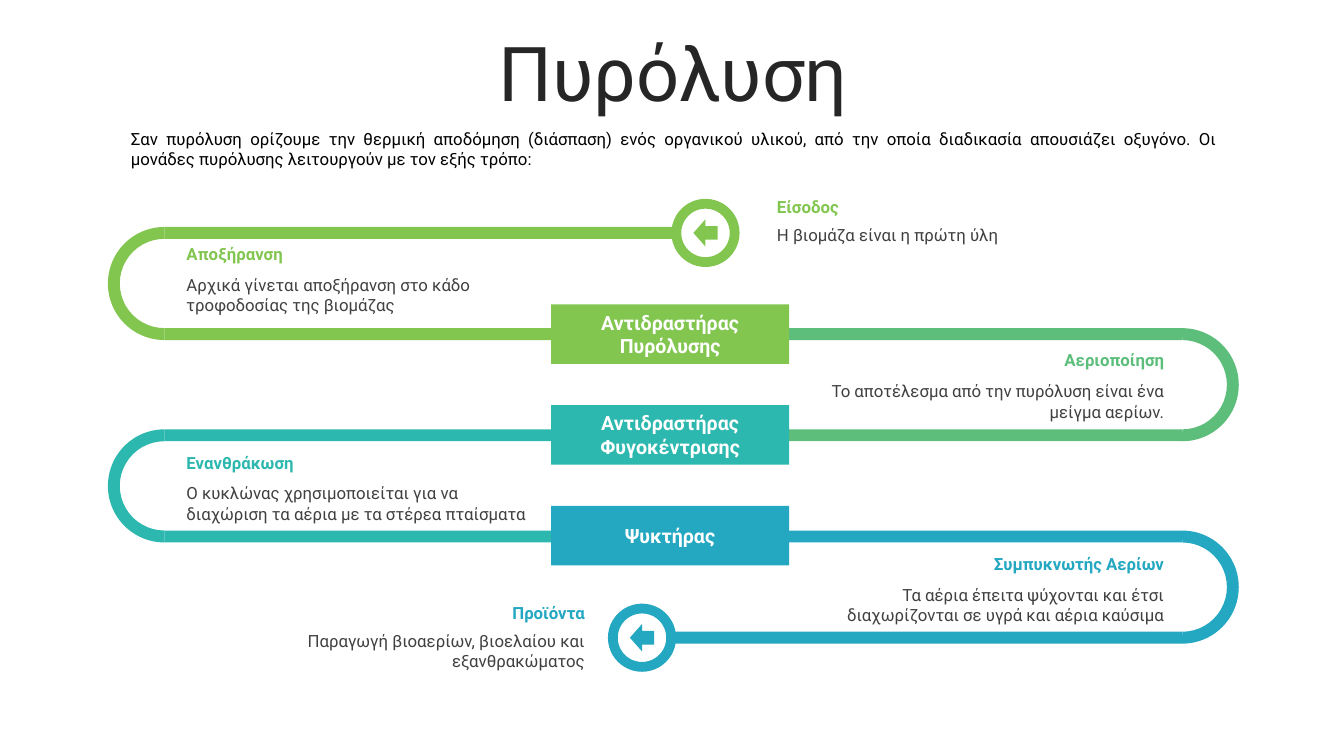
from pptx import Presentation
from pptx.dml.color import RGBColor
from pptx.enum import shapes, text
from pptx.util import Cm, Pt

LIME, GREEN, TEAL, BLUE = "82C650", "5CBE7A", "2CB8AE", "24A8C2"
WHITE, BLACK, GREY, DARK = "FFFFFF", "000000", "404040", "262626"
FONT = "Roboto"
LEFT, RIGHT = text.PP_ALIGN.LEFT, text.PP_ALIGN.RIGHT
CENTER, JUSTIFY = text.PP_ALIGN.CENTER, text.PP_ALIGN.JUSTIFY
PRESET = shapes.MSO_SHAPE

FIRST_ROW, ROW_PITCH, BAND = 5.72, 2.55, 0.3
ARC = ROW_PITCH + BAND
LEFT_ARC, RIGHT_ARC = 2.72, 28.37
QUARTER_DOWN, QUARTER_UP = 54, 162  # 90 and 270 degrees

# side, upper row, colour, inner ends of the upper and lower bands
LOOPS = [
    ("left", 0, LIME, 16.97, 14.15),
    ("left", 2, TEAL, 14.15, 14.15),
    ("right", 1, GREEN, 19.84, 19.84),
    ("right", 3, BLUE, 19.84, 16.87),
]
STAGES = [
    ("Αντιδραστήρας Πυρόλυσης", LIME),
    ("Αντιδραστήρας Φυγοκέντρισης", TEAL),
    ("Ψυκτήρας", BLUE),
]
# left, top, width, distance to body, alignment, colour, heading, body
CAPTIONS = [
    (4.45, 6.02, 9.02, 0.78, LEFT, LIME, "Αποξήρανση",
     "Αρχικά γίνεται αποξήρανση στο κάδο τροφοδοσίας της βιομάζας"),
    (4.45, 11.28, 9.12, 0.77, LEFT, TEAL, "Ενανθράκωση",
     "O κυκλώνας χρησιμοποιείται για να διαχώριση τα αέρια με τα στέρεα πταίσματα"),
    (20.47, 8.7, 9.12, 0.78, RIGHT, GREEN, "Αεριοποίηση",
     "Το αποτέλεσμα από την πυρόλυση είναι ένα μείγμα αερίων."),
    (20.37, 13.83, 9.22, 0.78, RIGHT, BLUE, "Συμπυκνωτής Αερίων",
     "Τα αέρια έπειτα ψύχονται και έτσι διαχωρίζονται σε υγρά και αέρια καύσιμα"),
    (6.81, 15.06, 8.18, 0.71, RIGHT, BLUE, "Προϊόντα",
     "Παραγωγή βιοαερίων, βιοελαίου και εξανθρακώματος"),
    (19.33, 4.83, 8.2, 0.71, LEFT, LIME, "Είσοδος",
     "Η βιομάζα είναι η πρώτη ύλη"),
]
INTRO = ("Σαν πυρόλυση ορίζουμε την θερμική αποδόμηση (διάσπαση) ενός οργανικού "
         "υλικού, από την οποία διαδικασία απουσιάζει οξυγόνο. Οι μονάδες πυρόλυσης "
         "λειτουργούν με τον εξής τρόπο:")


def rgb(value):
    return RGBColor.from_string(value)


def write(frame, words, size, color, align, bold=False):
    """Fill a text frame with one uniformly formatted paragraph."""
    frame.word_wrap = True
    para = frame.paragraphs[0]
    para.text = words
    para.alignment = align
    font = para.font
    font.name, font.size, font.bold = FONT, Pt(size), bold
    font.color.rgb = rgb(color)
    return para


def add_title(page, words):
    title = page.shapes.title
    title.left, title.top, title.width, title.height = Cm(0.89), Cm(0.94), Cm(32.16), Cm(2)
    frame = title.text_frame
    frame.auto_size = text.MSO_AUTO_SIZE.NONE
    frame.vertical_anchor = text.MSO_ANCHOR.MIDDLE
    para = write(frame, words, 54, DARK, CENTER)
    para.line_spacing = 0.9
    para.space_before = Pt(10)


def add_text(page, left, top, width, height, words, color, align, bold=False):
    box = page.shapes.add_textbox(Cm(left), Cm(top), Cm(width), Cm(height))
    write(box.text_frame, words, 12, color, align, bold)


def add_solid(page, preset, left, top, width, height, color):
    shape = page.shapes.add_shape(preset, Cm(left), Cm(top), Cm(width), Cm(height))
    shape.shadow.inherit = False
    shape.fill.solid()
    shape.fill.fore_color.rgb = rgb(color)
    shape.line.fill.background()
    return shape


def add_loop(page, side, row, color, *inner_ends):
    """Draw two bands on neighbouring rows, joined by a half ring."""
    top = FIRST_ROW + row * ROW_PITCH
    if side == "left":
        arc_left, angles = LEFT_ARC, (QUARTER_DOWN, QUARTER_UP)
    else:
        arc_left, angles = RIGHT_ARC, (QUARTER_UP, QUARTER_DOWN)
    arc = add_solid(page, PRESET.BLOCK_ARC, arc_left, top, ARC, ARC, color)
    arc.adjustments[0], arc.adjustments[1] = angles
    arc.adjustments[2] = BAND / ARC
    outer_end = arc_left + ARC / 2
    for index, inner_end in enumerate(inner_ends):
        add_solid(page, PRESET.RECTANGLE, min(outer_end, inner_end),
                  top + index * ROW_PITCH, abs(outer_end - inner_end), BAND, color)


def add_stage(page, index, words, color):
    box = add_solid(page, PRESET.RECTANGLE, 13.89, 7.67 + index * 2.54, 6, 1.5, color)
    frame = box.text_frame
    frame.margin_left = frame.margin_right = Cm(0.8)
    frame.vertical_anchor = text.MSO_ANCHOR.MIDDLE
    write(frame, words, 14, WHITE, CENTER, bold=True)


def add_terminal(page, center_x, row, color):
    """Draw a ring with a left arrow, centred on a row."""
    center_y = FIRST_ROW + row * ROW_PITCH + BAND / 2
    size, arrow_width, arrow_height = 1.47, 0.61, 0.69
    ring = add_solid(page, PRESET.OVAL, center_x - size / 2, center_y - size / 2,
                     size, size, color)
    ring.fill.background()
    ring.line.color.rgb = rgb(color)
    ring.line.width = Pt(7)
    add_solid(page, PRESET.LEFT_ARROW, center_x - arrow_width / 2,
              center_y - arrow_height / 2, arrow_width, arrow_height, color)


def add_caption(page, left, top, width, drop, align, color, heading, body):
    add_text(page, left, top, width, 0.77, heading, color, align, bold=True)
    add_text(page, left, top + drop, width, 1.28, body, GREY, align)


def main():
    deck = Presentation()
    deck.slide_width, deck.slide_height = Cm(33.87), Cm(19.05)
    page = deck.slides.add_slide(deck.slide_layouts.get_by_name("Title Only"))
    add_title(page, "Πυρόλυση")
    add_text(page, 3.05, 3.12, 27.89, 1.28, INTRO, BLACK, JUSTIFY)
    for loop in LOOPS:
        add_loop(page, *loop)
    for index, stage in enumerate(STAGES):
        add_stage(page, index, *stage)
    add_terminal(page, 17.78, 0, LIME)
    add_terminal(page, 16.18, 4, BLUE)
    for caption in CAPTIONS:
        add_caption(page, *caption)
    deck.save("out.pptx")


if __name__ == "__main__":
    main()
